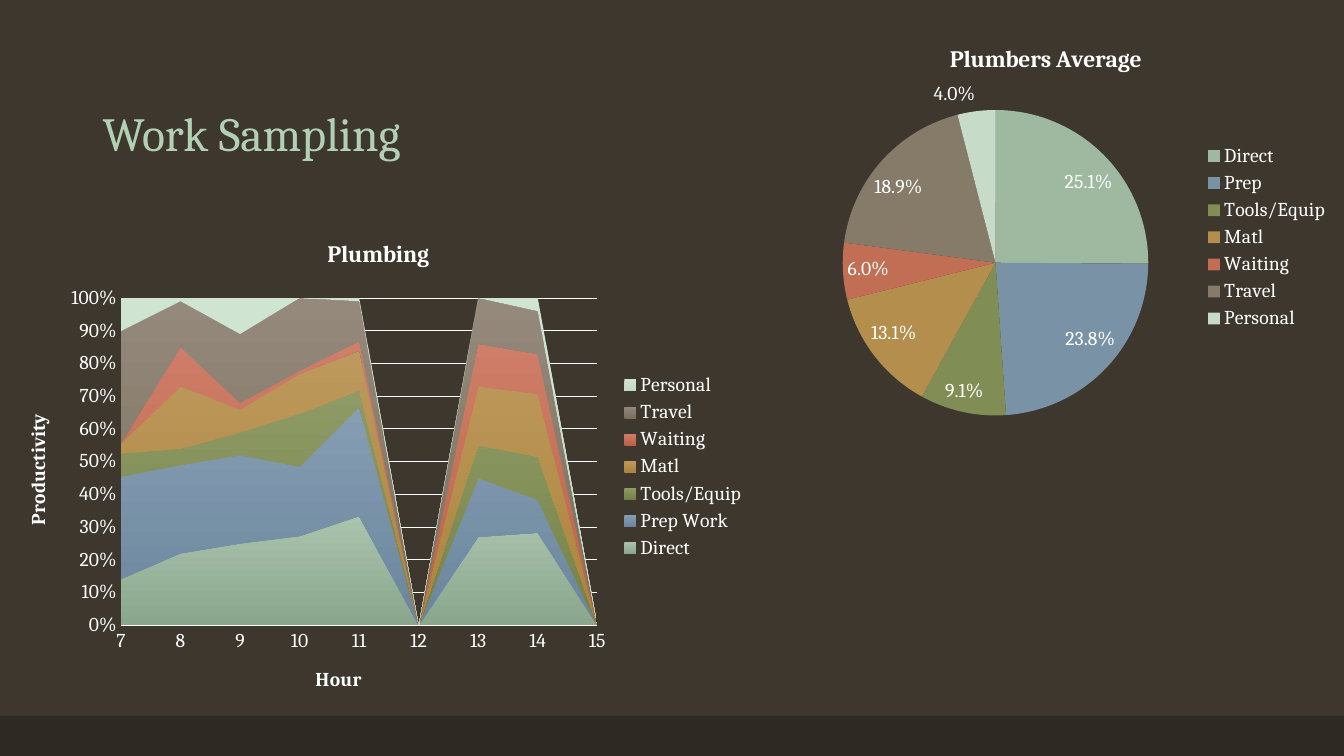
from dataclasses import dataclass

from lxml import etree
from pptx import Presentation
from pptx.chart.axis import _BaseAxis
from pptx.chart.chart import Chart
from pptx.chart.data import CategoryChartData
from pptx.dml.color import RGBColor
from pptx.dml.fill import FillFormat
from pptx.enum.chart import XL_CHART_TYPE, XL_LABEL_POSITION, XL_LEGEND_POSITION, XL_TICK_MARK
from pptx.enum.shapes import MSO_SHAPE
from pptx.enum.text import MSO_ANCHOR
from pptx.oxml.ns import qn
from pptx.slide import Slide
from pptx.util import Inches, Pt

AREA, PIE = XL_CHART_TYPE.AREA_STACKED_100, XL_CHART_TYPE.PIE
BEST_FIT = XL_LABEL_POSITION.BEST_FIT
LEGEND_RIGHT = XL_LEGEND_POSITION.RIGHT
NO_TICK = XL_TICK_MARK.NONE
RECTANGLE = MSO_SHAPE.RECTANGLE
BOTTOM = MSO_ANCHOR.BOTTOM


@dataclass(frozen=True)
class Theme:
    """Colours, font and type sizes of the slide."""

    background: str = "3D372E"
    footer: str = "2E2923"
    heading: str = "B2D0B4"
    text: str = "FFFFFF"
    font: str = "Cambria"
    heading_size: float = 34
    chart_title_size: float = 16.8
    chart_size: float = 14


@dataclass(frozen=True)
class Activity:
    """A kind of work with its hourly counts, average share and colours."""

    name: str
    hourly: tuple[int, ...]
    average: float
    top: str
    bottom: str
    slice: str
    long_name: str = ""


@dataclass(frozen=True)
class ChartSpec:
    """Kind, title, frame in inches and inner plot fractions of a chart."""

    kind: XL_CHART_TYPE
    title: str
    frame: tuple[float, float, float, float]
    plot: tuple[float, float, float, float]


THEME = Theme()
HOURS = [str(hour) for hour in range(7, 16)]
ACTIVITIES = [
    Activity("Direct", (14, 22, 25, 27, 33, 0, 27, 28, 0), 0.251, "A9C3AC", "8AA68D", "9FB8A0"),
    Activity("Prep", (31, 27, 27, 21, 33, 0, 18, 10, 0), 0.238, "869EB3", "6B859D", "7A92A6", "Prep Work"),
    Activity("Tools/Equip", (7, 5, 7, 16, 5, 0, 10, 13, 0), 0.091, "8E9B66", "748146", "808D54"),
    Activity("Matl", (3, 19, 7, 12, 12, 0, 18, 19, 0), 0.131, "BD995D", "AC843A", "B38E4D"),
    Activity("Waiting", (0, 12, 2, 1, 3, 0, 13, 12, 0), 0.06, "CF7E69", "BD6045", "C26E55"),
    Activity("Travel", (34, 14, 21, 22, 12, 0, 14, 13, 0), 0.189, "94897B", "7A6E5D", "867A69"),
    Activity("Personal", (10, 1, 11, 0, 1, 0, 0, 4, 0), 0.04, "D0E4D2", "C2DAC5", "C6DBC8"),
]
PLUMBING = ChartSpec(AREA, "Plumbing", (0, 2.17, 7.5, 4.92), (0.16, 0.16, 0.63, 0.66))
AVERAGE = ChartSpec(PIE, "Plumbers Average", (7.45, 0.25, 5.84, 4.21), (0.11, 0.2, 0.61, 0.72))


def apply(target: object, values: dict[str, object]) -> None:
    """Set each named attribute on the target."""
    for name, value in values.items():
        setattr(target, name, value)


def paint(fill: FillFormat, color: str) -> None:
    """Fill with one solid colour."""
    fill.solid()
    fill.fore_color.rgb = RGBColor.from_string(color)


def style_font(font: object, size: float, color: str = THEME.text, bold: bool = False) -> None:
    """Give a font the theme's face with a size, colour and weight."""
    apply(font, {"name": THEME.font, "size": Pt(size), "bold": bold})
    font.color.rgb = RGBColor.from_string(color)


def place_plot(chart: Chart, plot: tuple[float, float, float, float]) -> None:
    """Fix the inner plot area at the given fractions of the chart."""
    plot_area = chart._chartSpace.find(f".//{qn('c:plotArea')}")
    for old in plot_area.findall(qn("c:layout")):
        plot_area.remove(old)
    layout = etree.Element(qn("c:layout"))
    manual = etree.SubElement(layout, qn("c:manualLayout"))
    settings = [("layoutTarget", "inner"), ("xMode", "edge"), ("yMode", "edge")]
    settings += zip("xywh", map(str, plot))
    for tag, value in settings:
        etree.SubElement(manual, qn(f"c:{tag}")).set("val", value)
    plot_area.insert(0, layout)


def add_chart(slide: Slide, spec: ChartSpec, data: CategoryChartData) -> Chart:
    """Add a chart with the shared title, legend and text style."""
    frame = map(Inches, spec.frame)
    chart = slide.shapes.add_chart(spec.kind, *frame, data).chart
    style_font(chart.font, THEME.chart_size)
    apply(chart, {"has_title": True, "has_legend": True})
    apply(chart.legend, {"position": LEGEND_RIGHT, "include_in_layout": False})
    chart.chart_title.text_frame.text = spec.title
    title_run = chart.chart_title.text_frame.paragraphs[0].runs[0]
    style_font(title_run.font, THEME.chart_title_size, bold=True)
    place_plot(chart, spec.plot)
    return chart


def style_axis(axis: _BaseAxis, title: str, values: dict[str, object]) -> None:
    """Title an axis and set its ticks and other values."""
    apply(axis, {"major_tick_mark": NO_TICK, "minor_tick_mark": NO_TICK, **values})
    axis.axis_title.text_frame.text = title
    style_font(axis.axis_title.text_frame.paragraphs[0].runs[0].font, THEME.chart_size, bold=True)


def add_plumbing(slide: Slide) -> None:
    """Add the hourly area chart."""
    data = CategoryChartData()
    data.categories = HOURS
    for activity in ACTIVITIES:
        data.add_series(activity.long_name or activity.name, activity.hourly)
    chart = add_chart(slide, PLUMBING, data)
    for series, activity in zip(chart.plots[0].series, ACTIVITIES):
        fill = series.format.fill
        fill.gradient()
        fill.gradient_angle = 270
        for stop, color in zip(fill.gradient_stops, (activity.top, activity.bottom)):
            stop.color.rgb = RGBColor.from_string(color)
    hours, productivity = chart.category_axis, chart.value_axis
    style_axis(hours, "Hour", {"has_major_gridlines": False})
    style_axis(productivity, "Productivity", {
        "has_major_gridlines": True, "minimum_scale": 0, "maximum_scale": 1, "major_unit": 0.1,
    })
    apply(productivity.tick_labels, {"number_format": "0%", "number_format_is_linked": False})
    for line in (hours.format.line, productivity.major_gridlines.format.line):
        paint(line.fill, THEME.text)
        line.width = Pt(0.75)
    productivity.format.line.fill.background()
    value_axis = chart._chartSpace.find(f".//{qn('c:valAx')}")
    value_axis.find(f"{qn('c:title')}//{qn('a:bodyPr')}").set("rot", "-5400000")
    value_axis.find(qn("c:crossBetween")).set("val", "midCat")


def add_average(slide: Slide) -> None:
    """Add the pie chart of average shares."""
    data = CategoryChartData(number_format="0.0%")
    data.categories = [activity.name for activity in ACTIVITIES]
    data.add_series(AVERAGE.title, [activity.average for activity in ACTIVITIES])
    pie = add_chart(slide, AVERAGE, data).plots[0]
    apply(pie, {"vary_by_categories": True, "has_data_labels": True})
    apply(pie.data_labels, {
        "show_value": True, "show_percentage": False, "position": BEST_FIT,
        "number_format": "0.0%", "number_format_is_linked": False,
    })
    style_font(pie.data_labels.font, THEME.chart_size)
    for index, activity in enumerate(ACTIVITIES):
        paint(pie.series[0].points[index].format.fill, activity.slice)


def add_heading(slide: Slide) -> None:
    """Add the slide heading."""
    heading = slide.shapes.add_textbox(Inches(0.92), Inches(0.4), Inches(11.5), Inches(1.25))
    apply(heading.text_frame, {"word_wrap": True, "vertical_anchor": BOTTOM, "text": "Work Sampling"})
    line = heading.text_frame.paragraphs[0]
    line.line_spacing = 0.9
    style_font(line.runs[0].font, THEME.heading_size, THEME.heading)


def main() -> None:
    """Build and save the slide."""
    deck = Presentation()
    apply(deck, {"slide_width": Inches(13.33), "slide_height": Inches(7.5)})
    slide = deck.slides.add_slide(deck.slide_layouts[6])
    paint(slide.background.fill, THEME.background)
    footer = slide.shapes.add_shape(RECTANGLE, 0, Inches(7.1), deck.slide_width, Inches(0.4))
    footer.shadow.inherit = False
    paint(footer.fill, THEME.footer)
    footer.line.fill.background()
    add_heading(slide)
    add_plumbing(slide)
    add_average(slide)
    deck.save("out.pptx")


if __name__ == "__main__":
    main()
